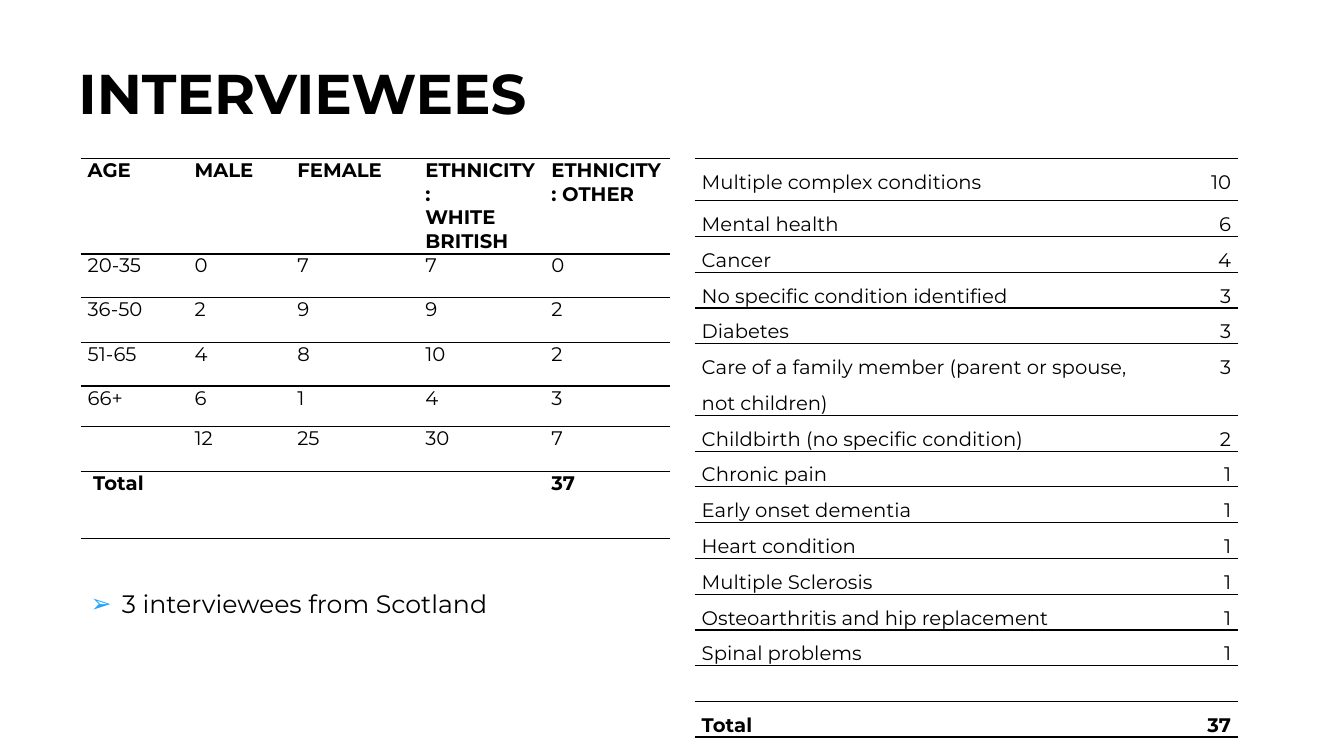
from lxml.etree import SubElement
from pptx import Presentation
from pptx.dml.color import RGBColor
from pptx.enum.text import MSO_ANCHOR as Anchor, PP_ALIGN as Align
from pptx.oxml import parse_xml
from pptx.oxml.ns import nsdecls, qn
from pptx.util import Emu, Pt

EMU_PER_PX = 9144
FONT = "Montserrat"
COLORS = {"ink": "000000", "bullet": "20A4FF"}

AGE_COLUMNS = [106, 102, 127, 125, 125]
AGE_HEIGHTS = [95, 43, 45, 43, 40, 45, 66]
AGE_ROWS = [
    ["AGE", "MALE", "FEMALE", "ETHNICITY:\nWHITE BRITISH", "ETHNICITY: OTHER"],
    ["20-35", "0", "7", "7", "0"],
    ["36-50", "2", "9", "9", "2"],
    ["51-65", "4", "8", "10", "2"],
    ["66+", "6", "1", "4", "3"],
    ["", "12", "25", "30", "7"],
    [" Total", "", "", "", "37"],
]

CONDITION_COLUMNS = [441, 98]
CONDITION_ROWS = [
    ["Multiple complex conditions", "10"],
    ["Mental health", "6"],
    ["Cancer", "4"],
    ["No specific condition identified", "3"],
    ["Diabetes", "3"],
    ["Care of a family member (parent or spouse, not children)", "3"],
    ["Childbirth (no specific condition)", "2"],
    ["Chronic pain", "1"],
    ["Early onset dementia", "1"],
    ["Heart condition", "1"],
    ["Multiple Sclerosis", "1"],
    ["Osteoarthritis and hip replacement", "1"],
    ["Spinal problems", "1"],
    ["", ""],
    ["Total", "37"],
]
CONDITION_HEIGHTS = [42] + [35] * 4 + [69] + [35] * 9


def px(length):
    return Emu(length * EMU_PER_PX)


def apply(target, formats):
    for name, value in formats.items():
        setattr(target, name, value)


def write(frame, text, size, bold=False, **para_formats):
    for index, line in enumerate(text.split("\n")):
        para = frame.add_paragraph() if index else frame.paragraphs[0]
        apply(para, para_formats)
        if line:
            span = para.add_run()
            span.text = line
            apply(span.font, {"name": FONT, "size": Pt(size), "bold": bold})
            span.font.color.rgb = RGBColor.from_string(COLORS["ink"])


def add_text(page, place, text, size, anchor=Anchor.TOP, **formats):
    frame = page.shapes.add_textbox(*map(px, place)).text_frame
    apply(frame, {"word_wrap": True, "vertical_anchor": anchor})
    write(frame, text, size, **formats)
    return frame


def add_bullet(para, symbol, indent):
    props = para._p.get_or_add_pPr()
    props.set("marL", str(px(indent)))
    props.set("indent", str(-px(indent)))
    color = SubElement(props, qn("a:buClr"))
    SubElement(color, qn("a:srgbClr")).set("val", COLORS["bullet"])
    SubElement(props, qn("a:buFont")).set("typeface", FONT)
    SubElement(props, qn("a:buChar")).set("char", symbol)


def rule_cell(cell):
    cell.fill.background()
    props = cell._tc.get_or_add_tcPr()
    solid = f'<a:solidFill><a:srgbClr val="{COLORS["ink"]}"/></a:solidFill>'
    paints = {"L": "<a:noFill/>", "R": "<a:noFill/>", "T": solid, "B": solid}
    for index, (side, paint) in enumerate(paints.items()):
        border = f'<a:ln{side} {nsdecls("a")} w="{Pt(1)}">{paint}</a:ln{side}>'
        props.insert(index, parse_xml(border))


def add_ruled_table(page, left, top, widths, heights, rows, bold_rows, aligns, spacing):
    place = map(px, (left, top, sum(widths), sum(heights)))
    table = page.shapes.add_table(len(rows), len(widths), *place).table
    apply(table, {"first_row": False, "horz_banding": False})
    for column, width in zip(table.columns, widths):
        column.width = px(width)
    for row, height in zip(table.rows, heights):
        row.height = px(height)
    margins = {"margin_left": px(7), "margin_right": px(7),
               "margin_top": 0, "margin_bottom": 0}
    for r, texts in enumerate(rows):
        for c, text in enumerate(texts):
            cell = table.cell(r, c)
            apply(cell, margins)
            rule_cell(cell)
            write(cell.text_frame, text, 14, bold=r in bold_rows,
                  alignment=aligns[c], line_spacing=spacing)


def main():
    deck = Presentation()
    apply(deck, {"slide_width": px(1333), "slide_height": px(750)})
    page = deck.slides.add_slide(deck.slide_layouts[6])
    add_ruled_table(page, 80, 157, AGE_COLUMNS, AGE_HEIGHTS, AGE_ROWS,
                    {0, len(AGE_ROWS) - 1}, [Align.LEFT] * 5, 1.0)
    add_ruled_table(page, 689, 157, CONDITION_COLUMNS, CONDITION_HEIGHTS, CONDITION_ROWS,
                    {len(CONDITION_ROWS) - 1}, [Align.LEFT, Align.RIGHT], 1.5)
    note = add_text(page, (80, 579, 604, 101), "3 interviewees from Scotland", 18)
    add_bullet(note.paragraphs[0], "➢", 31)
    add_text(page, (68, 23, 1195, 145), "INTERVIEWEES", 40, Anchor.MIDDLE,
             bold=True, line_spacing=0.9)
    deck.save("out.pptx")


if __name__ == "__main__":
    main()
